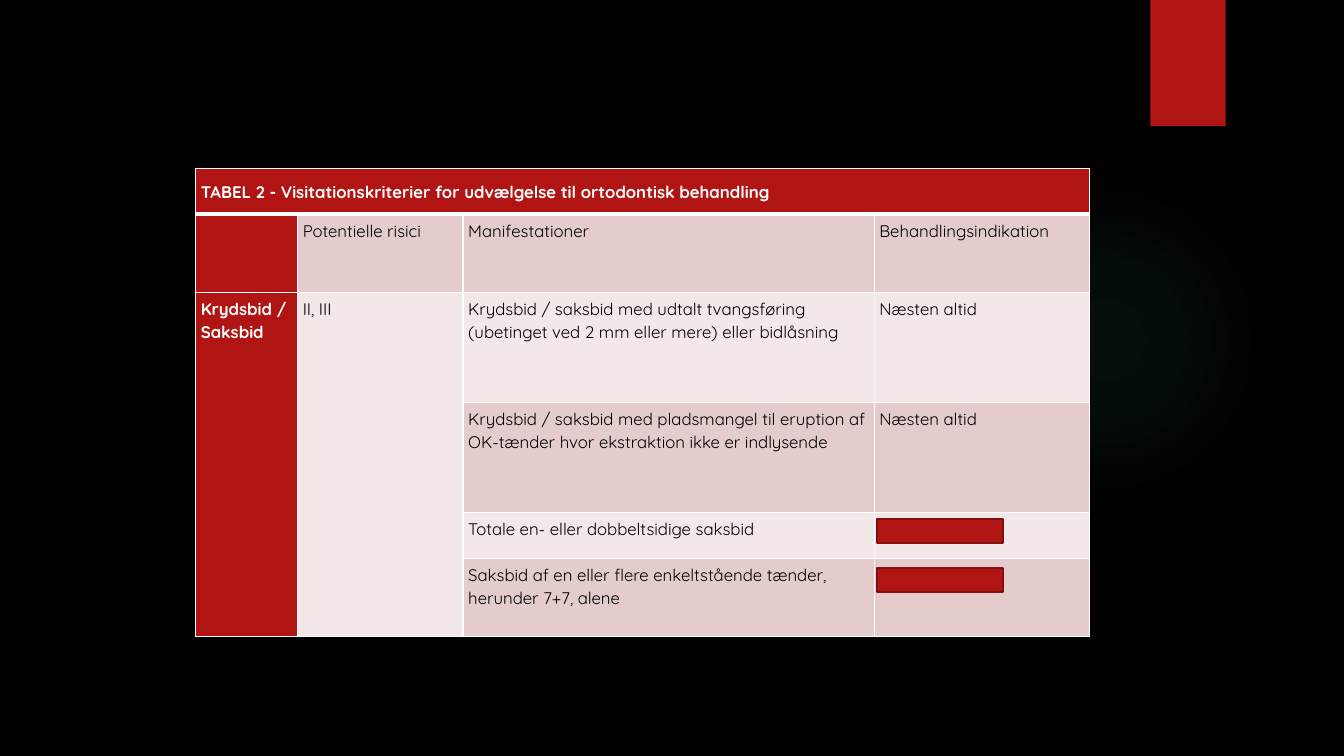
from itertools import accumulate

from lxml import etree
from pptx import Presentation
from pptx.dml.color import RGBColor
from pptx.enum.shapes import MSO_SHAPE
from pptx.enum.text import MSO_ANCHOR
from pptx.oxml import parse_xml
from pptx.oxml.ns import qn
from pptx.util import Cm, Pt

RECT, OVAL = MSO_SHAPE.RECTANGLE, MSO_SHAPE.OVAL
TOP, MIDDLE = MSO_ANCHOR.TOP, MSO_ANCHOR.MIDDLE

ROWS = [
    ["TABEL 2 - Visitationskriterier for udvælgelse til ortodontisk behandling", "", "", ""],
    ["", "Potentielle risici", "Manifestationer", "Behandlingsindikation"],
    ["Krydsbid / Saksbid", "II, III",
     "Krydsbid / saksbid med udtalt tvangsføring (ubetinget ved 2 mm eller mere) eller bidlåsning",
     "Næsten altid"],
    ["", "",
     "Krydsbid / saksbid med pladsmangel til eruption af OK-tænder hvor ekstraktion ikke er indlysende",
     "Næsten altid"],
    ["", "", "Totale en- eller dobbeltsidige saksbid", ""],
    ["", "", "Saksbid af en eller flere enkeltstående tænder, herunder 7+7, alene", ""],
]
SPANS = [((0, 0), (0, 3)), ((2, 0), (5, 0)), ((2, 1), (5, 1))]
WIDTHS = [2.57, 4.17, 10.36, 5.42]
HEIGHTS = [1.16, 1.97, 2.77, 2.77, 1.16, 1.97]
LEFT, HEAD = 4.93, 4.24
COVERS = [(4, 0.18), (5, 0.24)]

THEME = {
    "back": "000000", "red": "B01513", "edge": "82100E", "glow": "50B9C1",
    "dark": "E4CCCC", "pale": "F2E8E7", "white": "FFFFFF", "black": "000000",
    "font": "Quicksand", "size": Pt(12),
}
GLOW = [(0, 7), (36, 6), (69, 0)]
MARGINS = {f"margin_{side}": Cm(0.13) for side in ("left", "right", "top", "bottom")}


def color(name):
    return RGBColor.from_string(THEME[name])


def paint(fill, name):
    fill.solid()
    fill.fore_color.rgb = color(name)


def apply(item, values):
    for key, value in values.items():
        setattr(item, key, value)


def add_box(slide, kind, box, name, edge=None):
    shape = slide.shapes.add_shape(kind, *map(Cm, box))
    shape.shadow.inherit = False
    paint(shape.fill, name)
    if edge:
        paint(shape.line.fill, edge)
        shape.line.width = Pt(1.5)
    else:
        shape.line.fill.background()
    return shape


def add_glow(slide):
    shape = add_box(slide, OVAL, (23.9, 4.65, 7.82, 7.82), "glow")
    stops = "".join(
        f'<a:gs pos="{pos * 1000}"><a:srgbClr val="{THEME["glow"]}">'
        f'<a:alpha val="{alpha * 1000}"/></a:srgbClr></a:gs>'
        for pos, alpha in GLOW)
    grad = parse_xml(
        '<a:gradFill xmlns:a="http://schemas.openxmlformats.org/drawingml/2006/main">'
        f'<a:gsLst>{stops}</a:gsLst><a:path path="circle">'
        '<a:fillToRect l="50000" t="50000" r="50000" b="50000"/></a:path></a:gradFill>')
    props = shape.element.spPr
    props.replace(props.find(qn("a:solidFill")), grad)


def add_edges(cell, row):
    props = cell._tc.get_or_add_tcPr()
    for side in "LRTB":
        thick = (row, side) in ((0, "B"), (1, "T"))
        line = etree.SubElement(props, qn(f"a:ln{side}"), w=str(Pt(3 if thick else 1)))
        fill = etree.SubElement(line, qn("a:solidFill"))
        etree.SubElement(fill, qn("a:srgbClr"), val=THEME["white"])


def fill_cell(cell, row, col):
    strong = row == 0 or col == 0
    apply(cell, {**MARGINS, "vertical_anchor": TOP if row else MIDDLE})
    add_edges(cell, row)
    striped = row % 2 and col != 1 or row == 1
    paint(cell.fill, "red" if strong else "dark" if striped else "pale")
    para = cell.text_frame.paragraphs[0]
    para.line_spacing = 1.07
    if ROWS[row][col]:
        run = para.add_run()
        run.text = ROWS[row][col]
        apply(run.font, {"name": THEME["font"], "size": THEME["size"], "bold": strong})
        run.font.color.rgb = color("white" if strong else "black")


def add_grid(slide):
    box = map(Cm, (LEFT, HEAD, sum(WIDTHS), sum(HEIGHTS)))
    table = slide.shapes.add_table(len(ROWS), len(WIDTHS), *box).table
    apply(table, {"first_row": False, "horz_banding": False})
    for col, width in zip(table.columns, WIDTHS):
        col.width = Cm(width)
    for row, height in zip(table.rows, HEIGHTS):
        row.height = Cm(height)
    for start, end in SPANS:
        table.cell(*start).merge(table.cell(*end))
    for row in range(len(ROWS)):
        for col in range(len(WIDTHS)):
            fill_cell(table.cell(row, col), row, col)


def main():
    deck = Presentation()
    apply(deck, {"slide_width": Cm(33.87), "slide_height": Cm(19.05)})
    slide = deck.slides.add_slide(deck.slide_layouts[6])
    paint(slide.background.fill, "back")
    add_glow(slide)
    add_box(slide, RECT, (28.99, 0, 1.9, 3.18), "red")
    add_grid(slide)
    tops = list(accumulate(HEIGHTS, initial=HEAD))
    left = LEFT + sum(WIDTHS[:3]) + 0.08
    for row, gap in COVERS:
        add_box(slide, RECT, (left, tops[row] + gap, 3.17, 0.6), "red", "edge")
    deck.save("out.pptx")


if __name__ == "__main__":
    main()
